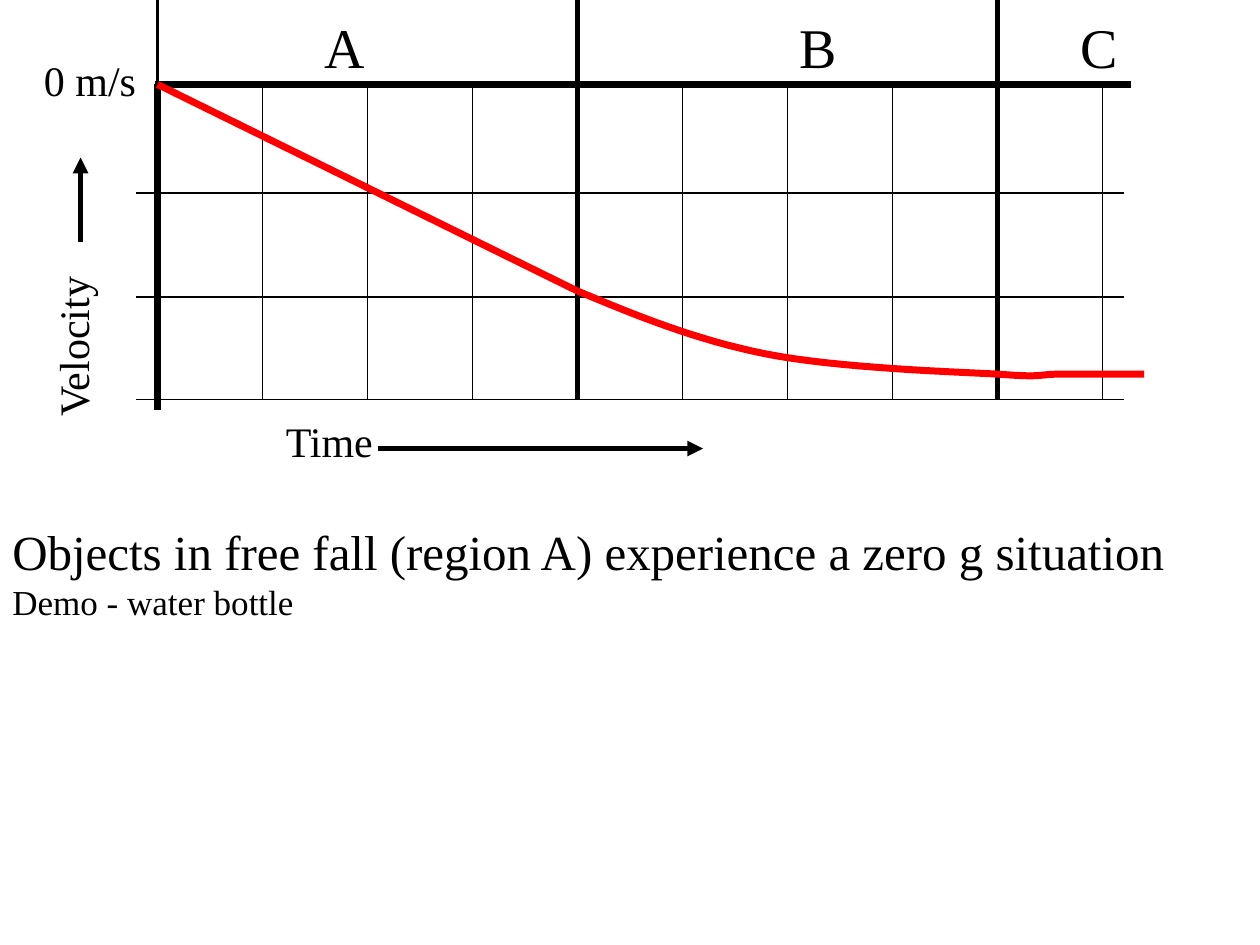
from lxml import etree
from pptx import Presentation, util as u
from pptx.dml.color import RGBColor
from pptx.enum import shapes, text
from pptx.oxml.ns import qn

INK, RED = "000000", "FF0000"


def paint(code):
    """Turn a hex string into a colour."""
    return RGBColor.from_string(code)


def style(shape, width, code):
    """Set the line width and colour of a shape."""
    shape.line.width = u.Pt(width)
    shape.line.color.rgb = paint(code)


def rule(slide, start, end, width=1, code=INK, arrow=False):
    """Draw a straight line, with an arrowhead at its end if asked."""
    ends = [u.Inches(v) for v in (*start, *end)]
    line = slide.shapes.add_connector(shapes.MSO_CONNECTOR.STRAIGHT, *ends)
    style(line, width, code)
    props = line._element.spPr
    if arrow:
        etree.SubElement(props.find(qn("a:ln")), qn("a:tailEnd"), type="triangle")
    etree.SubElement(props, qn("a:effectLst"))


def label(slide, box, lines, wrap=False, turn=0, hang=0):
    """Write (words, size) lines in a text box."""
    shape = slide.shapes.add_textbox(*[u.Inches(v) for v in box])
    shape.rotation = turn
    frame = shape.text_frame
    frame.word_wrap = wrap
    frame.auto_size = text.MSO_AUTO_SIZE.SHAPE_TO_FIT_TEXT
    for i, (words, size) in enumerate(lines):
        para = frame.add_paragraph() if i else frame.paragraphs[0]
        if hang:
            props = para._p.get_or_add_pPr()
            props.set("marL", str(u.Inches(hang)))
            props.set("indent", str(-u.Inches(hang)))
        run = para.add_run()
        run.text = words
        for key, value in {"name": "Times New Roman", "size": u.Pt(size)}.items():
            setattr(run.font, key, value)
        run.font.color.rgb = paint(INK)


def bezier(pts, steps=16):
    """List points along a cubic curve, leaving out its start."""
    def mix(t, vals):
        """Blend four values at t."""
        a, b, c, d = vals
        s = 1 - t
        return s**3 * a + 3 * s * s * t * b + 3 * s * t * t * c + t**3 * d
    return [tuple(u.Inches(mix(i / steps, v)) for v in zip(*pts))
            for i in range(1, steps + 1)]


def grid(slide, box):
    """Draw the axes, grid lines and region borders."""
    x, y, w, h = box
    step = w / 9
    rule(slide, (x, y), (x, y + 2.58), 4)
    rule(slide, (x - 0.02, y), (x + 7.73, y), 4)
    for i in range(1, 10):
        col = x + i * step
        rule(slide, (col, y + h), (col, y), 1 if i % 4 else 3)
    for drop in (0.86, 1.69, h):
        rule(slide, (x - 0.17, y + drop), (x + 7.67, y + drop))
    for i, width in ((0, 2), (4, 3), (8, 3)):
        col = x + i * step
        rule(slide, (col, y), (col, 0), width)


def curve(slide, box):
    """Draw the straight fall and the bend to steady velocity."""
    x, y, w, h = box
    bend = (x + w * 4 / 9, y + 1.64)
    rule(slide, (x, y), bend, 4, RED)
    arcs = [[(4.81, 1.84), (5.28, 2.03), (4.83, 2.14)],
            [(5.39, 2.25), (6.28, 2.28), (6.67, 2.3)],
            [(7.06, 2.33), (6.97, 2.3), (7.17, 2.3)],
            [(7.36, 2.3), (7.6, 2.3), (7.83, 2.3)]]
    arcs[0][:2] = [(3.81, 1.84), (4.28, 2.03)]
    pts, start = [], bend
    for arc in arcs:
        knots = [start] + [(x + a, y + b) for a, b in arc]
        pts += bezier(knots)
        start = knots[-1]
    path = slide.shapes.build_freeform(*[u.Inches(v) for v in bend])
    path.add_line_segments(pts, close=False)
    shape = path.convert_to_shape()
    shape.shadow.inherit = False
    shape.fill.background()
    style(shape, 4, RED)


def names(slide, box):
    """Label the regions and the two axes."""
    x, y, w, h = box
    for word, left in (("A", 1.23), ("B", 5), ("C", 7.23)):
        label(slide, (x + left, y - 0.62, 0.5, 0.63), [(word, 32)])
    label(slide, (x - 1, y - 0.29, 0.93, 0.5), [("0 m/s", 24)])
    label(slide, (x - 1.35, y + 1.81, 1.35, 0.5), [("Velocity", 24)], turn=270)
    rule(slide, (x - 0.61, y + 1.25), (x - 0.61, y + 0.58), 3, arrow=True)
    label(slide, (x + 0.92, y + h + 0.08, 0.9, 0.5), [("Time", 24)])
    rule(slide, (x + 1.75, y + h + 0.39), (x + 4.33, y + h + 0.39), 3, arrow=True)


def main():
    """Build the free fall slide."""
    deck = Presentation()
    deck.slide_width, deck.slide_height = u.Inches(10), u.Inches(7.5)
    slide = deck.slides.add_slide(deck.slide_layouts[6])
    label(slide, (0, 4.09, 10, 1.17),
          [("Objects in free fall (region A) experience a zero g situation", 28),
           ("Demo - water bottle", 20)], wrap=True, hang=0.5)
    plot = (1.25, 0.67, 7.5, 2.5)
    for part in (grid, curve, names):
        part(slide, plot)
    deck.save("out.pptx")


if __name__ == "__main__":
    main()
